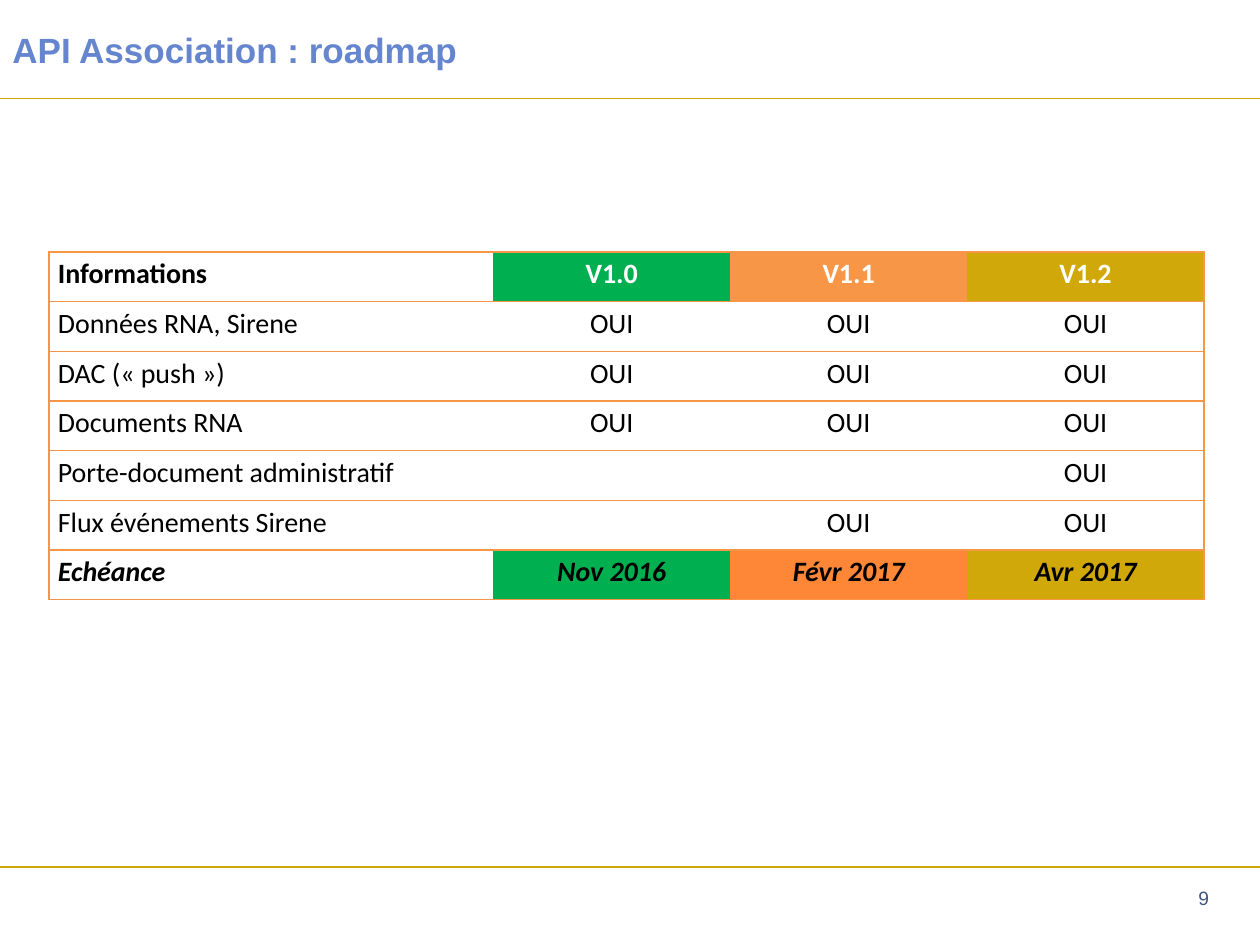
from dataclasses import dataclass

from lxml.etree import SubElement
from pptx import Presentation
from pptx.dml.color import RGBColor
from pptx.enum.shapes import MSO_CONNECTOR
from pptx.enum.text import MSO_ANCHOR, PP_ALIGN
from pptx.oxml.ns import qn
from pptx.util import Pt


@dataclass(frozen=True)
class Theme:
    gold: str = "D0A80A"
    green: str = "00B050"
    orange: str = "F79646"
    deep_orange: str = "FE8637"
    title: str = "6585CF"
    page: str = "42557F"
    black: str = "000000"
    white: str = "FFFFFF"
    title_size: int = 20
    page_size: int = 11
    table_size: int = 16
    heading_font: str = "Arial"
    table_font: str = "Calibri"


THEME = Theme()
SLIDE_WIDTH, SLIDE_HEIGHT = 720, 540
HEADER_RULE_Y, FOOTER_RULE_Y = 56.2, 495.4
TABLE_LEFT, TABLE_TOP = 28.1, 144
COLUMN_WIDTHS = [253.8, 135.4, 135.4, 135.4]
ROW_HEIGHT = 28.4
YES = "OUI"
ROADMAP = [
    ["Informations", "V1.0", "V1.1", "V1.2"],
    ["Données RNA, Sirene", YES, YES, YES],
    ["DAC (« push »)", YES, YES, YES],
    ["Documents RNA", YES, YES, YES],
    ["Porte-document administratif", "", "", YES],
    ["Flux événements Sirene", "", YES, YES],
    ["Echéance", "Nov 2016", "Févr 2017", "Avr 2017"],
]
VERSION_FILLS = [None, THEME.green, THEME.orange, THEME.gold]
DEADLINE_FILLS = [None, THEME.green, THEME.deep_orange, THEME.gold]


def apply_format(target, values):
    for name, value in values.items():
        setattr(target, name, value)


def write(paragraph, text, color, paragraph_format, font_format):
    apply_format(paragraph, paragraph_format)
    run = paragraph.add_run()
    run.text = text
    apply_format(run.font, font_format)
    run.font.color.rgb = RGBColor.from_string(color)


def add_rule(slide, y):
    rule = slide.shapes.add_connector(
        MSO_CONNECTOR.STRAIGHT, Pt(0), Pt(y), Pt(SLIDE_WIDTH), Pt(y))
    rule.line.color.rgb = RGBColor.from_string(THEME.gold)
    rule.line.width = Pt(0.75)
    SubElement(rule.element.spPr, qn("a:effectLst"))


def add_label(slide, box, text, color, alignment, font_format):
    frame = slide.shapes.add_textbox(*map(Pt, box)).text_frame
    apply_format(frame, {"word_wrap": True, "vertical_anchor": MSO_ANCHOR.MIDDLE})
    write(frame.paragraphs[0], text, color, {"alignment": alignment}, font_format)


def set_borders(cell, is_first, is_last):
    properties = cell._tc.get_or_add_tcPr()
    visible = {"a:lnL": is_first, "a:lnR": is_last, "a:lnT": True, "a:lnB": True}
    for side, shown in visible.items():
        border = SubElement(properties, qn(side), w=str(Pt(1)))
        if shown:
            fill = SubElement(border, qn("a:solidFill"))
            SubElement(fill, qn("a:srgbClr"), val=THEME.orange)
        else:
            SubElement(border, qn("a:noFill"))


def fill_cell(cell, color):
    if color:
        cell.fill.solid()
        cell.fill.fore_color.rgb = RGBColor.from_string(color)
    else:
        cell.fill.background()


def add_roadmap(slide):
    last_row, last_column = len(ROADMAP) - 1, len(COLUMN_WIDTHS) - 1
    table = slide.shapes.add_table(
        len(ROADMAP), len(COLUMN_WIDTHS), Pt(TABLE_LEFT), Pt(TABLE_TOP),
        Pt(sum(COLUMN_WIDTHS)), Pt(ROW_HEIGHT * len(ROADMAP))).table
    apply_format(table, {"first_row": False, "horz_banding": False})
    for column, width in zip(table.columns, COLUMN_WIDTHS):
        column.width = Pt(width)
    row_fills = {0: VERSION_FILLS, last_row: DEADLINE_FILLS}
    for r, texts in enumerate(ROADMAP):
        table.rows[r].height = Pt(ROW_HEIGHT)
        for c, text in enumerate(texts):
            cell = table.cell(r, c)
            apply_format(cell, {"margin_left": Pt(5), "margin_right": Pt(5),
                                "margin_top": 0, "margin_bottom": 0})
            set_borders(cell, c == 0, c == last_column)
            fill_cell(cell, row_fills[r][c] if r in row_fills else None)
            if text:
                write(cell.text_frame.paragraphs[0], text,
                      THEME.white if r == 0 and c > 0 else THEME.black,
                      {"alignment": PP_ALIGN.CENTER if c else PP_ALIGN.LEFT,
                       "line_spacing": 1.15,
                       "space_before": Pt(3), "space_after": Pt(3)},
                      {"name": THEME.table_font, "size": Pt(THEME.table_size),
                       "bold": r in row_fills, "italic": r == last_row})


def main():
    presentation = Presentation()
    apply_format(presentation, {"slide_width": Pt(SLIDE_WIDTH),
                                "slide_height": Pt(SLIDE_HEIGHT)})
    slide = presentation.slides.add_slide(presentation.slide_layouts[6])
    for y in (HEADER_RULE_Y, FOOTER_RULE_Y):
        add_rule(slide, y)
    add_label(slide, (0, 0, SLIDE_WIDTH, HEADER_RULE_Y),
              "API Association : roadmap", THEME.title, PP_ALIGN.LEFT,
              {"name": THEME.heading_font, "size": Pt(THEME.title_size), "bold": True})
    add_label(slide, (530, 498.5, 168, 28.8), "9", THEME.page, PP_ALIGN.RIGHT,
              {"name": THEME.heading_font, "size": Pt(THEME.page_size)})
    add_roadmap(slide)
    presentation.save("out.pptx")


if __name__ == "__main__":
    main()
